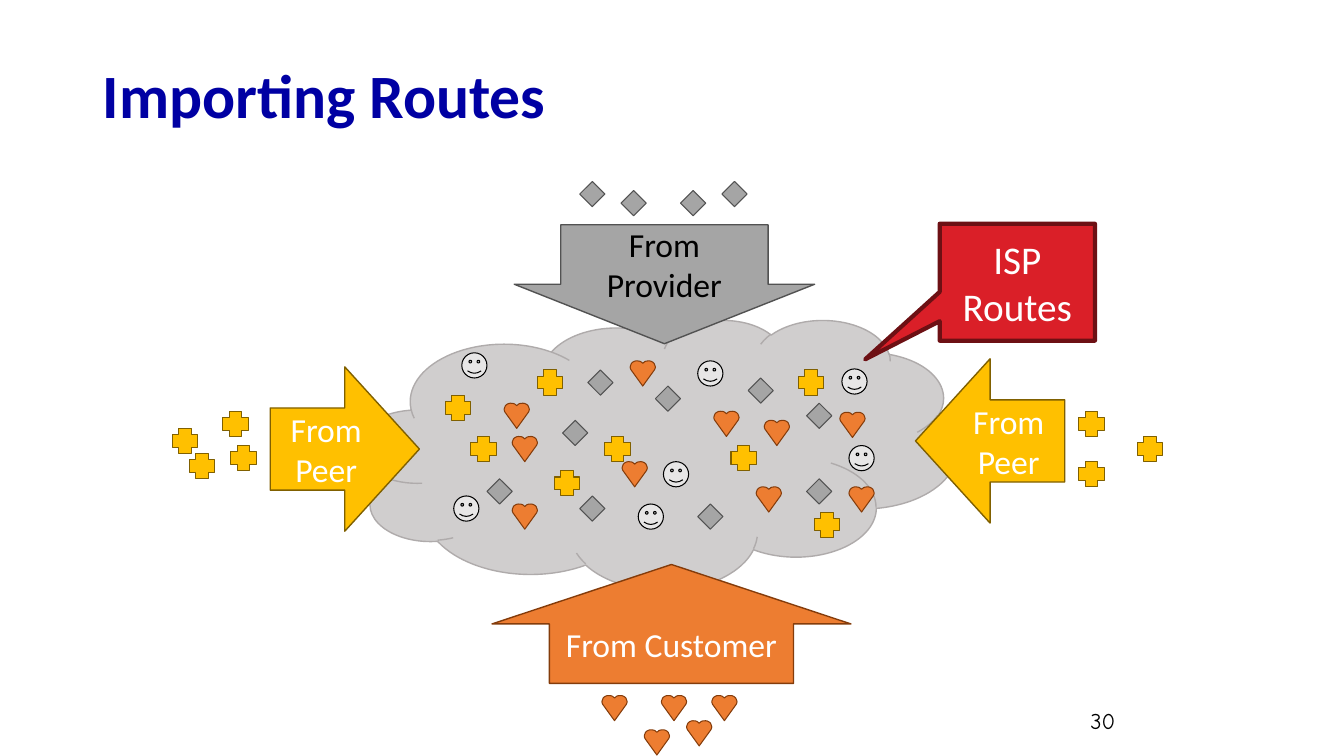
from pptx import Presentation
from pptx.dml.color import RGBColor
from pptx.enum.shapes import MSO_SHAPE
from pptx.enum.text import MSO_ANCHOR, PP_ALIGN
from pptx.util import Inches, Pt

BLACK = RGBColor(0x00, 0x00, 0x00)
WHITE = RGBColor(0xFF, 0xFF, 0xFF)
NAVY = RGBColor(0x00, 0x00, 0xA3)
CLOUD_FILL, CLOUD_LINE = RGBColor(0xD0, 0xCE, 0xCE), RGBColor(0xAF, 0xAB, 0xAB)
PROVIDER_FILL, PROVIDER_LINE = RGBColor(0xA5, 0xA5, 0xA5), RGBColor(0x52, 0x52, 0x52)
PEER_FILL, PEER_LINE = RGBColor(0xFF, 0xC0, 0x00), RGBColor(0x80, 0x60, 0x00)
CUSTOMER_FILL, CUSTOMER_LINE = RGBColor(0xED, 0x7D, 0x31), RGBColor(0x84, 0x3C, 0x0B)
ISP_FILL, ISP_LINE = RGBColor(0xDA, 0x1F, 0x28), RGBColor(0x6D, 0x10, 0x14)
SMILEY_FILL = RGBColor(0xE7, 0xE6, 0xE6)

ROUTE_SIZE = 0.25

# Left and top of every route marker, inside and outside the cloud
PROVIDER_ROUTES = [
    (8, 4), (5.75, 4.92), (8, 4.75), (5.83, 3.67), (7.42, 3.75), (6.92, 5),
    (6.5, 3.83), (4.83, 4.75), (5.58, 4.17),
    (6.75, 1.89), (5.75, 1.8), (7.16, 1.8), (6.16, 1.89),
]
PEER_ROUTES = [
    (4.42, 3.92), (6, 4.33), (8.08, 5.08), (7.92, 3.67), (4.67, 4.33),
    (5.5, 4.67), (7.25, 4.42), (5.33, 3.67),
    (10.7, 4.58), (1.88, 4.5), (2.29, 4.42), (1.71, 4.25), (2.21, 4.08),
    (10.7, 4.08), (11.28, 4.33),
]
ISP_ROUTES = [
    (6.33, 5), (6.92, 3.58), (4.5, 4.92), (4.58, 3.5), (8.42, 4.42),
    (6.58, 4.58), (8.35, 3.66),
]
CUSTOMER_ROUTES = [
    (8.42, 4.83), (7.5, 4.83), (5.08, 5), (5.08, 4.33), (5, 4), (6.17, 4.58),
    (7.08, 4.08), (6.25, 3.58), (8.33, 4.09), (7.58, 4.17),
    (6.39, 7.24), (6.81, 7.15), (5.97, 6.9), (7.06, 6.9), (6.56, 6.9),
]

# Left half of the heart outline, in percent, from the notch to the tip
HEART_HALF = [
    (50, 10), (48, 8), (44, 5), (42, 3), (36, 1), (25, 0), (19, 1), (14, 3),
    (9, 6), (5, 10), (3, 15), (1, 20), (0, 25), (1, 30), (3, 35), (50, 100),
]


def set_text(frame, text, size, color, font="Calibri", bold=False,
             align=PP_ALIGN.CENTER, line_spacing=None):
    frame.word_wrap = True
    frame.vertical_anchor = MSO_ANCHOR.MIDDLE
    paragraph = frame.paragraphs[0]
    paragraph.alignment = align
    paragraph.line_spacing = line_spacing
    run = paragraph.add_run()
    run.text = text
    run.font.name, run.font.size, run.font.bold = font, Pt(size), bold
    run.font.color.rgb = color


def paint(shape, fill, line, weight):
    shape.shadow.inherit = False
    shape.fill.solid()
    shape.fill.fore_color.rgb = fill
    shape.line.color.rgb = line
    shape.line.width = Pt(weight)


def add_preset(slide, kind, box, fill, line, weight=1.0, adjustments=()):
    shape = slide.shapes.add_shape(kind, *map(Inches, box))
    for index, value in enumerate(adjustments):
        shape.adjustments[index] = value
    paint(shape, fill, line, weight)
    return shape


def add_routes(slide, kind, places, fill, line):
    for left, top in places:
        add_preset(slide, kind, (left, top, ROUTE_SIZE, ROUTE_SIZE), fill, line, 0.75)


def add_hearts(slide, places):
    right_half = [(100 - x, y) for x, y in reversed(HEART_HALF[1:-1])]
    outline = HEART_HALF + right_half
    for left, top in places:
        builder = slide.shapes.build_freeform(*outline[0], scale=Inches(ROUTE_SIZE) / 100)
        builder.add_line_segments(outline[1:], close=True)
        heart = builder.convert_to_shape(Inches(left), Inches(top))
        paint(heart, CUSTOMER_FILL, CUSTOMER_LINE, 0.75)


def main():
    deck = Presentation()
    deck.slide_width, deck.slide_height = Inches(13.33), Inches(7.5)
    slide = deck.slides.add_slide(deck.slide_layouts[5])

    # Title
    title = slide.shapes.title
    title.left, title.top = Inches(0.92), Inches(0.49)
    title.width, title.height = Inches(11.5), Inches(0.98)
    set_text(title.text_frame, "Importing Routes", 44, NAVY, bold=True,
             align=PP_ALIGN.LEFT, line_spacing=0.9)

    # Network cloud and page number
    add_preset(slide, MSO_SHAPE.CLOUD, (3.54, 3.17, 5.95, 2.68), CLOUD_FILL, CLOUD_LINE)
    page_number = slide.shapes.add_textbox(*map(Inches, (8.83, 6.95, 2.33, 0.4)))
    set_text(page_number.text_frame, "30", 16, BLACK, font="Comic Neue",
             align=PP_ALIGN.RIGHT)

    # Route markers
    add_routes(slide, MSO_SHAPE.DIAMOND, PROVIDER_ROUTES, PROVIDER_FILL, PROVIDER_LINE)
    add_routes(slide, MSO_SHAPE.CROSS, PEER_ROUTES, PEER_FILL, PEER_LINE)
    add_routes(slide, MSO_SHAPE.SMILEY_FACE, ISP_ROUTES, SMILEY_FILL, BLACK)
    add_hearts(slide, CUSTOMER_ROUTES)

    # Import arrows
    for kind, box, fill, line, adjustments, label, color in [
        (MSO_SHAPE.DOWN_ARROW, (5.1, 2.23, 2.98, 1.18), PROVIDER_FILL,
         PROVIDER_LINE, (0.69, 0.5), "From Provider", BLACK),
        (MSO_SHAPE.LEFT_ARROW, (9.08, 3.56, 1.48, 1.63), PEER_FILL,
         PEER_LINE, (), "From Peer", WHITE),
        (MSO_SHAPE.RIGHT_ARROW, (2.68, 3.64, 1.48, 1.63), PEER_FILL,
         PEER_LINE, (), "From Peer", WHITE),
        (MSO_SHAPE.UP_ARROW, (4.88, 5.6, 3.56, 1.18), CUSTOMER_FILL,
         CUSTOMER_LINE, (0.68, 0.5), "From Customer", WHITE),
    ]:
        arrow = add_preset(slide, kind, box, fill, line, adjustments=adjustments)
        set_text(arrow.text_frame, label, 24, color)

    # Callout for the provider's own routes
    isp_callout = add_preset(slide, MSO_SHAPE.RECTANGULAR_CALLOUT, (9.32, 2.22, 1.54, 1.16),
                             ISP_FILL, ISP_LINE, 3, (-0.98, 0.66))
    set_text(isp_callout.text_frame, "ISP Routes", 28, WHITE)

    deck.save("out.pptx")


if __name__ == "__main__":
    main()
